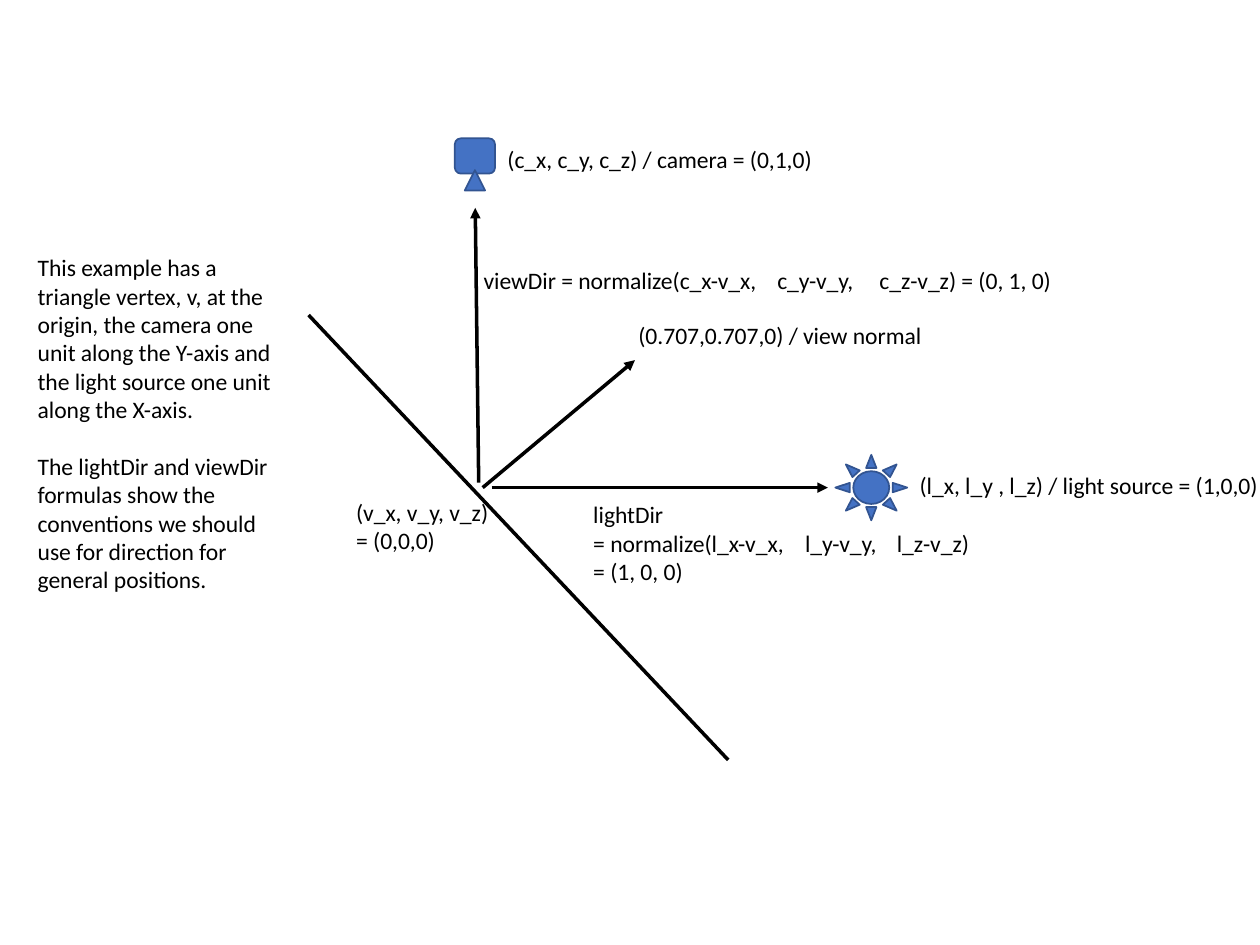
import lxml.etree
import pptx
import pptx.dml.color
import pptx.enum.shapes
import pptx.enum.text
import pptx.oxml.ns
import pptx.util

Cm, Pt = pptx.util.Cm, pptx.util.Pt
KIND = pptx.enum.shapes.MSO_SHAPE
qn = pptx.oxml.ns.qn

THEME = {
    "font": "Calibri", "size": 13.5, "ink": "000000",
    "fill": "4472C4", "edge": "325491", "thick": 2, "thin": 1,
}

# Content: lengths in cm
LINES = [  # start, end, arrowhead
    ((14.68, 15.32), (6.22, 6.35), False),  # surface
    ((9.65, 9.73), (9.58, 4.19), True),     # view direction
    ((9.91, 9.83), (16.69, 9.83), True),    # light direction
    ((9.73, 9.83), (12.8, 7.26), True),     # normal
]
ICONS = [
    (KIND.ROUNDED_RECTANGLE, (9.17, 2.79, 0.81, 0.71)),  # camera body
    (KIND.ISOSCELES_TRIANGLE, (9.37, 3.43, 0.41, 0.41)),  # camera lens
    (KIND.SUN, (16.84, 9.17, 1.45, 1.32)),               # light source
]
TEXTS = [  # box, paragraphs, format
    ((6.93, 9.91, 3.23, 1.42), ["(v_x, v_y, v_z)", "= (0,0,0)"], {}),
    ((9.98, 2.79, 6.76, 0.84), ["(c_x, c_y, c_z) / camera = (0,1,0)"], {}),
    ((18.29, 9.37, 7.44, 0.84),
     ["(l_x, l_y , l_z) / light source = (1,0,0)"], {}),
    ((12.62, 6.35, 6.32, 0.84), ["(0.707,0.707,0) / view normal"], {}),
    ((9.5, 5.23, 12.14, 0.84),
     ["viewDir = normalize(c_x-v_x,\tc_y-v_y,\tc_z-v_z) = (0, 1, 0)"],
     {"tabs": (5.92, 7.98)}),
    ((11.71, 9.96, 8.23, 1.98),
     ["lightDir", "= normalize(l_x-v_x,\tl_y-v_y,\tl_z-v_z)", "= (1, 0, 0)"],
     {"tabs": (4.27, 6.12)}),
    ((0.51, 4.98, 5.26, 7.19),
     ["This example has a triangle vertex, v, at the origin, the camera one "
      "unit along the Y-axis and the light source one unit along the X-axis.",
      "The lightDir and viewDir formulas show the conventions we should use "
      "for direction for general positions."],
     {"wrap": True, "gap": 16.5}),
]


def tint(name):
    return pptx.dml.color.RGBColor.from_string(THEME[name])


def add_text(slide, box, paras, wrap=False, gap=0, tabs=()):
    frame = slide.shapes.add_textbox(*map(Cm, box)).text_frame
    frame.word_wrap = wrap
    frame.auto_size = pptx.enum.text.MSO_AUTO_SIZE.SHAPE_TO_FIT_TEXT
    for i, text in enumerate(paras):
        para = frame.add_paragraph() if i else frame.paragraphs[0]
        if i and gap:
            para.space_before = Pt(gap)
        if "\t" in text:
            stops = lxml.etree.SubElement(
                para._p.get_or_add_pPr(), qn("a:tabLst"))
            for pos in tabs:
                lxml.etree.SubElement(
                    stops, qn("a:tab"), pos=str(int(Cm(pos))), algn="l")
        run = para.add_run()
        run.text = text
        run.font.name = THEME["font"]
        run.font.size = Pt(THEME["size"])
        run.font.color.rgb = tint("ink")


def add_line(slide, start, end, arrow):
    line = slide.shapes.add_connector(
        pptx.enum.shapes.MSO_CONNECTOR.STRAIGHT, *map(Cm, start + end))
    line.line.color.rgb = tint("ink")
    line.line.width = Pt(THEME["thick"])
    if arrow:
        lxml.etree.SubElement(
            line.line._get_or_add_ln(), qn("a:tailEnd"), type="triangle")
    lxml.etree.SubElement(line._element.spPr, qn("a:effectLst"))


def add_icon(slide, kind, box):
    icon = slide.shapes.add_shape(kind, *map(Cm, box))
    icon.shadow.inherit = False
    icon.fill.solid()
    icon.fill.fore_color.rgb = tint("fill")
    icon.line.color.rgb = tint("edge")
    icon.line.width = Pt(THEME["thin"])


def main():
    deck = pptx.Presentation()
    deck.slide_width, deck.slide_height = Cm(25.4), Cm(19.05)
    slide = deck.slides.add_slide(deck.slide_layouts[6])
    # Surface and directions
    for start, end, arrow in LINES:
        add_line(slide, start, end, arrow)
    # Camera and light
    for kind, box in ICONS:
        add_icon(slide, kind, box)
    # Labels and notes
    for box, paras, form in TEXTS:
        add_text(slide, box, paras, **form)
    deck.save("out.pptx")


if __name__ == "__main__":
    main()
